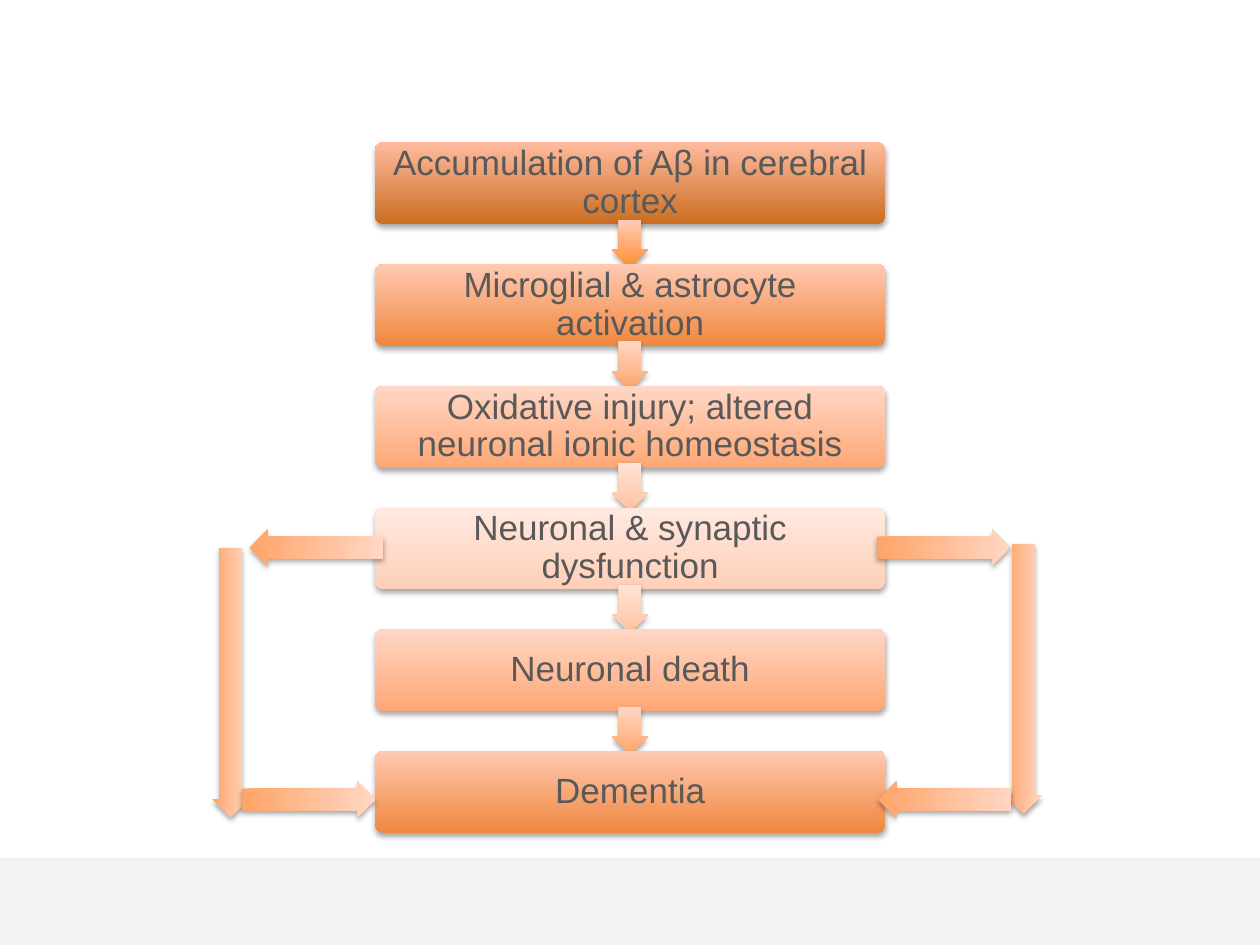
from lxml.etree import SubElement
from pptx import Presentation
from pptx.dml.color import RGBColor
from pptx.enum.shapes import MSO_SHAPE
from pptx.enum.text import MSO_ANCHOR, PP_ALIGN
from pptx.oxml.ns import qn
from pptx.util import Cm, Pt

COLORS = {
    "footer": "F2F2F2", "text": "595959", "shadow": "000000",
    "box_dark": "CA6D20", "box_dark_top": "FFBB9E",
    "box_strong": "F0873E", "box_strong_top": "FFC9B2",
    "box_soft": "FEA775", "box_soft_top": "FFD7C6",
    "box_pale": "FFCFB8", "box_pale_top": "FFE9DF",
    "arrow_strong": "FF8D30", "arrow_strong_top": "FFCDB7",
    "arrow_soft": "FFA468", "arrow_soft_top": "FFD7C4",
    "arrow_pale": "FFC1A1", "arrow_pale_top": "FFE3D6",
}


def rgb(name):
    return RGBColor.from_string(COLORS[name])


def write_text(box, text, font="Arial", size=20, color="text", margin=0.25, spacing=0.9):
    frame = box.text_frame
    frame.word_wrap = True
    frame.vertical_anchor = MSO_ANCHOR.MIDDLE
    frame.margin_left = frame.margin_right = Cm(margin)
    frame.margin_top = frame.margin_bottom = Cm(margin)
    para = frame.paragraphs[0]
    para.alignment = PP_ALIGN.CENTER
    para.line_spacing = spacing
    span = para.add_run()
    span.text = text
    span.font.name = font
    span.font.size = Pt(size)
    span.font.color.rgb = rgb(color)


class FlowPage:
    """Holds the current slide and the shared look of its shapes."""

    def __init__(self, page):
        self.page = page

    def shape(self, kind, left, top, width, height):
        shape = self.page.shapes.add_shape(kind, Cm(left), Cm(top), Cm(width), Cm(height))
        shape.line.fill.background()
        shape.shadow.inherit = False
        return shape

    def band(self, left, top, width, height):
        band = self.shape(MSO_SHAPE.RECTANGLE, left, top, width, height)
        band.fill.solid()
        band.fill.fore_color.rgb = rgb("footer")

    def shade(self, shape, tone, angle):
        shape.fill.gradient()
        shape.fill.gradient_angle = angle
        for stop, name in zip(shape.fill.gradient_stops, (tone, tone + "_top")):
            stop.color.rgb = rgb(name)
        effects = shape.element.spPr.find(qn("a:effectLst"))
        shadow = SubElement(effects, qn("a:outerShdw"), blurRad=str(Pt(3.1)),
                            dist=str(Pt(1.8)), dir="5400000", rotWithShape="0")
        color = SubElement(shadow, qn("a:srgbClr"), val=COLORS["shadow"])
        SubElement(color, qn("a:alpha"), val="35000")

    def box(self, text, tone, left, top, width, height):
        box = self.shape(MSO_SHAPE.ROUNDED_RECTANGLE, left, top, width, height)
        box.adjustments[0] = 0.1
        self.shade(box, tone, 90)
        write_text(box, text)

    def arrow(self, kind, tone, left, top, width, height, angle=0):
        arrow = self.shape(kind, left, top, width, height)
        arrow.adjustments[0] = 0.6
        arrow.adjustments[1] = 0.5
        self.shade(arrow, tone, angle)


def main():
    deck = Presentation()
    deck.slide_width, deck.slide_height = Cm(25.4), Cm(19.05)
    flow = FlowPage(deck.slides.add_slide(deck.slide_layouts[6]))

    # Footer band
    flow.band(0, 17.3, 25.4, 1.75)

    # Central chain: each step is followed by an arrow to the next
    steps = [
        ("Accumulation of Aβ in cerebral cortex", "box_dark", "arrow_strong"),
        ("Microglial & astrocyte activation", "box_strong", "arrow_soft"),
        ("Oxidative injury; altered neuronal ionic homeostasis", "box_soft", "arrow_pale"),
        ("Neuronal & synaptic dysfunction", "box_pale", "arrow_pale"),
        ("Neuronal death", "box_soft", "arrow_soft"),
        ("Dementia", "box_strong", None),
    ]
    first_top, last_top = 2.87, 15.14
    pitch = (last_top - first_top) / (len(steps) - 1)
    for index, (text, box_tone, arrow_tone) in enumerate(steps):
        top = first_top + index * pitch
        flow.box(text, box_tone, 7.56, top, 10.29, 1.65)
        if arrow_tone:
            flow.arrow(MSO_SHAPE.DOWN_ARROW, arrow_tone, 12.33, top + 1.56, 0.74, 0.97, 90)

    # Side routes from dysfunction to dementia
    thick, short, tall = 0.74, 2.69, 5.44
    right, left, down = MSO_SHAPE.RIGHT_ARROW, MSO_SHAPE.LEFT_ARROW, MSO_SHAPE.DOWN_ARROW
    for kind, x, y, width, height in [
        (right, 17.68, 10.67, short, thick),
        (left, 5.03, 10.67, short, thick),
        (down, 20.26, 10.96, thick, tall),
        (down, 4.28, 11.04, thick, tall),
        (right, 4.88, 15.75, short, thick),
        (left, 17.7, 15.75, short, thick),
    ]:
        flow.arrow(kind, "arrow_soft", x, y, width, height)

    deck.save("out.pptx")


if __name__ == "__main__":
    main()
